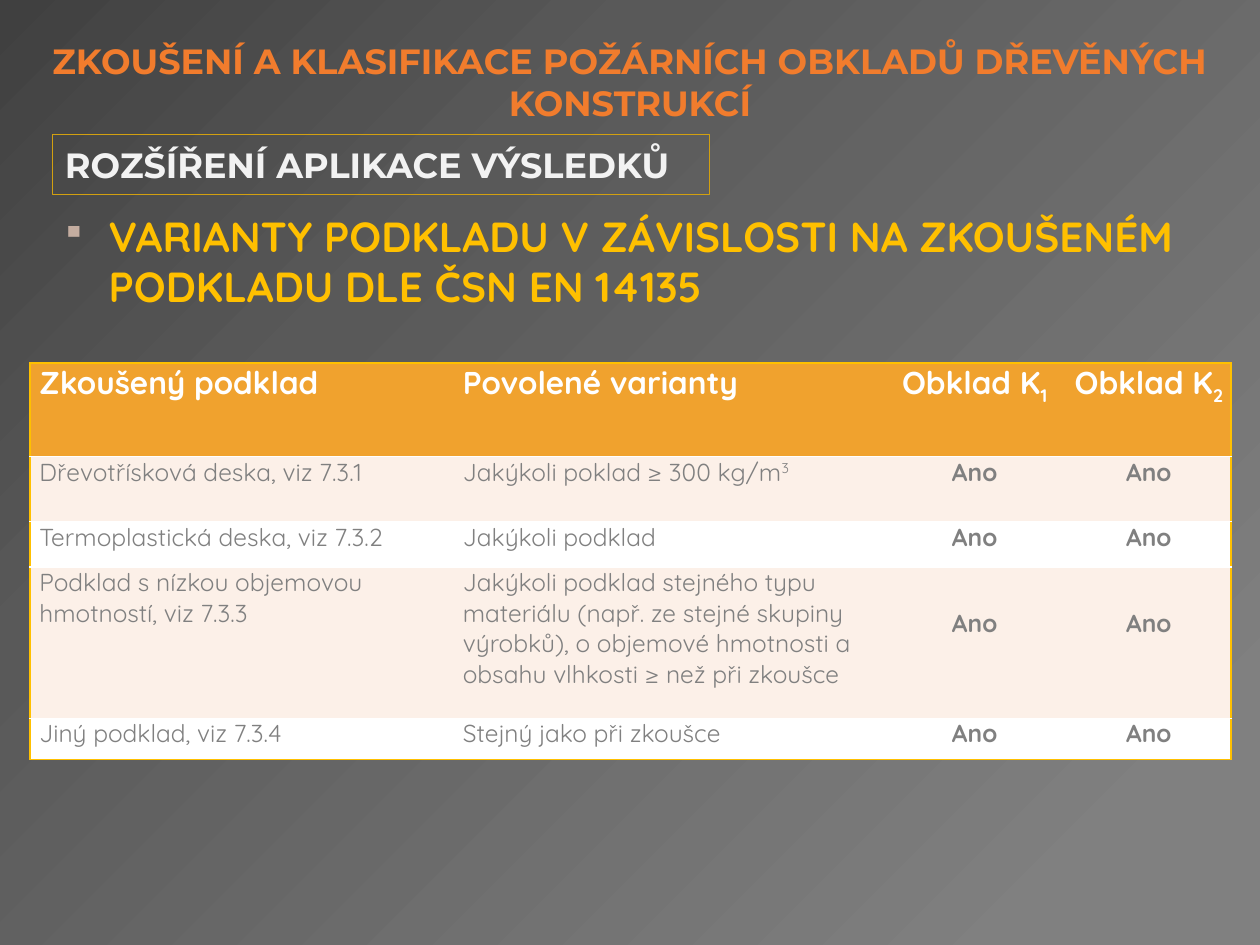
from dataclasses import dataclass

from lxml.etree import SubElement
from pptx import Presentation
from pptx.dml.color import RGBColor
from pptx.enum.shapes import MSO_SHAPE as SHAPE
from pptx.enum.text import MSO_ANCHOR as ANCHOR, PP_ALIGN as ALIGN
from pptx.oxml import parse_xml
from pptx.oxml.ns import nsdecls, qn
from pptx.util import Pt


@dataclass(frozen=True)
class Theme:
    heading_font: str = "Montserrat"
    body_font: str = "Quicksand"
    title: str = "F17C2D"
    box_text: str = "F2F2F2"
    box_line: str = "D2A010"
    accent: str = "FFC000"
    bullet: str = "C4ADA0"
    header: str = "F0A22E"
    band: str = "FCF0E8"
    white: str = "FFFFFF"
    cell_text: str = "808080"
    backdrop: tuple = ((0, "404040"), (30, "595959"), (89, "808080"))
    heading_size: int = 20
    topic_size: int = 24
    header_size: int = 18
    cell_size: int = 14


T = Theme()


def write(p, text, size=T.cell_size, color=T.cell_text, font=T.body_font,
          bold=False, align=ALIGN.LEFT, base=0):
    p.alignment = align
    r = p.add_run()
    r.text = text
    r.font.size = Pt(size)
    r.font.name = font
    r.font.bold = bold
    r.font.color.rgb = RGBColor.from_string(color)
    if base:
        r.font._element.set("baseline", str(base * 1000))


prs = Presentation()
prs.slide_width, prs.slide_height = Pt(720), Pt(540)
s = prs.slides.add_slide(prs.slide_layouts[6])

stops = "".join(f'<a:gs pos="{pos * 1000}"><a:srgbClr val="{color}"/></a:gs>'
                for pos, color in T.backdrop)
s.element.cSld.insert(0, parse_xml(
    f'<p:bg {nsdecls("p", "a")}><p:bgPr><a:gradFill rotWithShape="1">'
    f'<a:gsLst>{stops}</a:gsLst><a:lin ang="2700000" scaled="0"/></a:gradFill>'
    '<a:effectLst/></p:bgPr></p:bg>'))

title = s.shapes.add_textbox(Pt(0), Pt(21), Pt(720), Pt(51))
tf = title.text_frame
tf.word_wrap = True
tf.vertical_anchor = ANCHOR.MIDDLE
write(tf.paragraphs[0], "ZKOUŠENÍ A KLASIFIKACE POŽÁRNÍCH OBKLADŮ DŘEVĚNÝCH KONSTRUKCÍ",
      size=T.heading_size, color=T.title, font=T.heading_font, bold=True, align=ALIGN.CENTER)

topic = s.shapes.add_textbox(Pt(28), Pt(116.5), Pt(692), Pt(62.5))
tf = topic.text_frame
tf.word_wrap = True
p = tf.paragraphs[0]
pPr = p._p.get_or_add_pPr()
pPr.set("marL", str(Pt(27)))
pPr.set("indent", str(Pt(-27)))
SubElement(SubElement(pPr, qn("a:buClr")), qn("a:srgbClr")).set("val", T.bullet)
SubElement(pPr, qn("a:buSzPct")).set("val", "80000")
SubElement(pPr, qn("a:buChar")).set("char", "▪")
write(p, "VARIANTY PODKLADU V ZÁVISLOSTI NA ZKOUŠENÉM PODKLADU DLE ČSN EN 14135",
      size=T.topic_size, color=T.accent, bold=True)

box = s.shapes.add_shape(SHAPE.RECTANGLE, Pt(30), Pt(77), Pt(375.5), Pt(34))
box.shadow.inherit = False
box.fill.background()
box.line.color.rgb = RGBColor.from_string(T.box_line)
box.line.width = Pt(0.75)
tf = box.text_frame
tf.word_wrap = True
tf.vertical_anchor = ANCHOR.MIDDLE
write(tf.paragraphs[0], "ROZŠÍŘENÍ APLIKACE VÝSLEDKŮ",
      size=T.heading_size, color=T.box_text, font=T.heading_font, bold=True)

rows = [
    ["Zkoušený podklad", "Povolené varianty", ("Obklad K", "1", -25), ("Obklad K", "2", -25)],
    ["Dřevotřísková deska, viz 7.3.1", ("Jakýkoli poklad ≥ 300 kg/m", "3", 30), "Ano", "Ano"],
    ["Termoplastická deska, viz 7.3.2", "Jakýkoli podklad", "Ano", "Ano"],
    ["Podklad s nízkou objemovou hmotností, viz 7.3.3",
     "Jakýkoli podklad stejného typu materiálu (např. ze stejné skupiny výrobků), "
     "o objemové hmotnosti a obsahu vlhkosti ≥ než při zkoušce", "Ano", "Ano"],
    ["Jiný podklad, viz 7.3.4", "Stejný jako při zkoušce", "Ano", "Ano"],
]
widths = [242, 245.5, 99.5, 99.5]
heights = [53.5, 37, 26, 86.5, 23.5]
tall_row = 3
last_row, last_col = len(rows) - 1, len(widths) - 1

frame = s.shapes.add_table(len(rows), len(widths), Pt(17), Pt(207.5),
                           Pt(sum(widths)), Pt(sum(heights)))
table = frame.table
table._tbl.tblPr.find(qn("a:tableStyleId")).text = "{2D5ABB26-0587-4C30-8999-92F81FD0307C}"
for column, width in zip(table.columns, widths):
    column.width = Pt(width)
for row, height in zip(table.rows, heights):
    row.height = Pt(height)

for i, row in enumerate(rows):
    for j, content in enumerate(row):
        cell = table.cell(i, j)
        centred = j > 1
        cell.margin_left = Pt(5.5)
        cell.margin_right = cell.margin_bottom = Pt(0)
        cell.margin_top = Pt(23.5 if centred and i == tall_row else 0)
        edges = {"lnL": T.accent if j == 0 else None,
                 "lnR": T.accent if j == last_col else None,
                 "lnT": T.accent if i == 0 else T.white,
                 "lnB": T.accent if i == last_row else T.white}
        tcPr = cell._tc.get_or_add_tcPr()
        for edge, color in edges.items():
            if color:
                ln = SubElement(tcPr, qn(f"a:{edge}"), w=str(Pt(1)))
                fill = SubElement(ln, qn("a:solidFill"))
                SubElement(fill, qn("a:srgbClr"), val=color)
        cell.fill.solid()
        cell.fill.fore_color.rgb = RGBColor.from_string(
            T.header if i == 0 else T.band if i % 2 else T.white)

        style = dict(bold=i == 0 or centred, align=ALIGN.CENTER if centred else ALIGN.LEFT)
        if i == 0:
            style.update(size=T.header_size, color=T.white)
        text, mark, base = content if isinstance(content, tuple) else (content, "", 0)
        p = cell.text_frame.paragraphs[0]
        write(p, text, **style)
        if mark:
            write(p, mark, base=base, **style)

prs.save("out.pptx")
